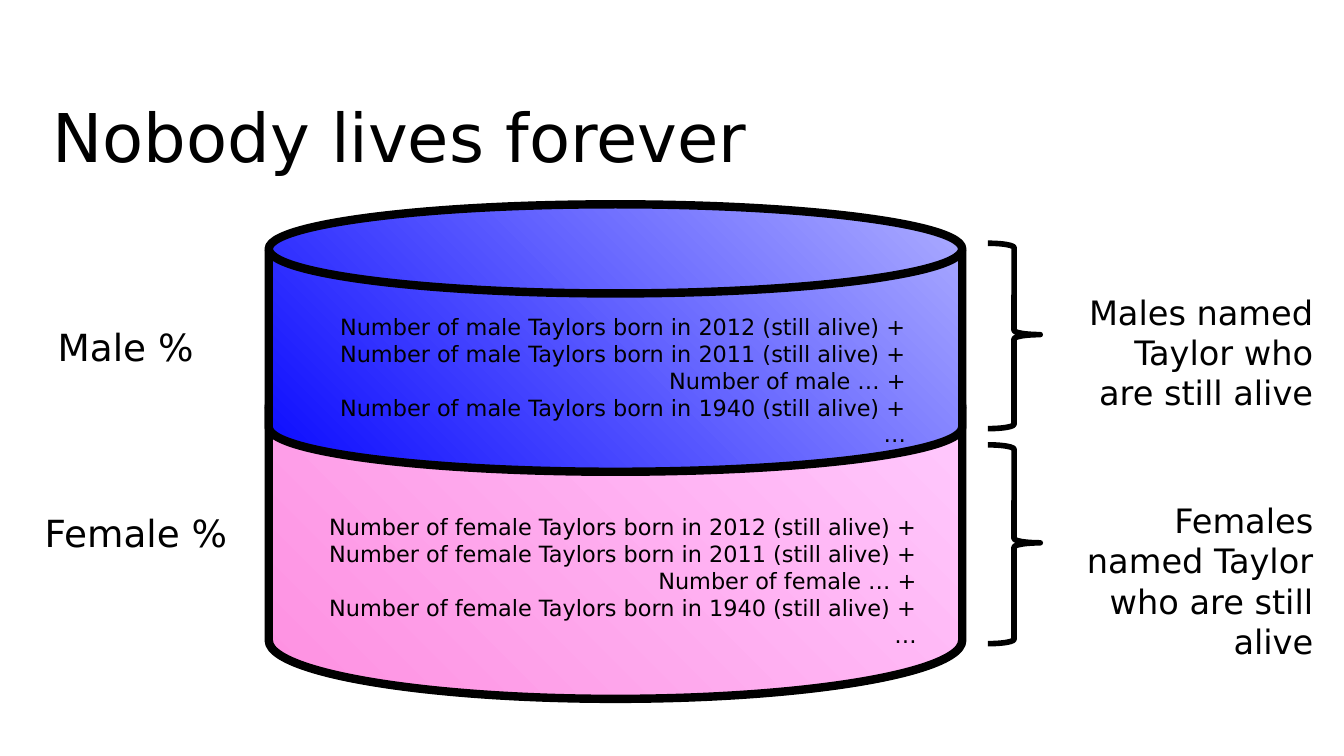
from copy import deepcopy

from pptx import Presentation
from pptx.dml.color import RGBColor
from pptx.enum.shapes import MSO_SHAPE
from pptx.enum.text import MSO_ANCHOR, MSO_AUTO_SIZE, PP_ALIGN
from pptx.oxml.ns import qn
from pptx.util import Inches, Pt

DISK = MSO_SHAPE.FLOWCHART_MAGNETIC_DISK
BRACE = MSO_SHAPE.RIGHT_BRACE
TOP = MSO_ANCHOR.TOP
GROW = MSO_AUTO_SIZE.SHAPE_TO_FIT_TEXT
LEFT, RIGHT = PP_ALIGN.LEFT, PP_ALIGN.RIGHT
FONT = "DejaVu Sans"
BLACK = RGBColor(0x00, 0x00, 0x00)
PINK = RGBColor(0xFE, 0x90, 0xE1)
PALE_PINK = RGBColor(0xFF, 0xCC, 0xFF)
BLUE = RGBColor(0x0A, 0x0A, 0xFF)
PALE_BLUE = RGBColor(0xAD, 0xAD, 0xFF)

# Widescreen 16:9 deck
deck = Presentation()
deck.slide_width = Inches(10)
deck.slide_height = deck.slide_width * 9 // 16
slide = deck.slides.add_slide(deck.slide_layouts[5])


def write_text(box, paragraphs, size, align=RIGHT, wrap=True):
    frame = box.text_frame
    frame.word_wrap = wrap
    frame.vertical_anchor = TOP
    for index, text in enumerate(paragraphs):
        para = frame.add_paragraph() if index else frame.paragraphs[0]
        para.alignment = align
        para.text = text.replace("\n", "\v")
        for span in para.runs:
            span.font.size = Pt(size)
            span.font.name = FONT
            span.font.color.rgb = BLACK
        # Line breaks take the format of the text around them
        for line_break in para._p.findall(qn("a:br")):
            line_break.append(deepcopy(span._r.rPr))


def add_outlined(kind, left, top, width, height, weight):
    shape = slide.shapes.add_shape(
        kind, Inches(left), Inches(top), Inches(width), Inches(height))
    shape.shadow.inherit = False
    shape.line.color.rgb = BLACK
    shape.line.width = Pt(weight)
    return shape


# Title
title = slide.shapes.title
title.left, title.top = Inches(0.29), Inches(0.66)
title.width, title.height = Inches(8.83), Inches(0.85)
write_text(title, ["Nobody lives forever"], 36, align=LEFT)

# Stacked disks, the lower one first
for top, height, dark, pale in [(2.59, 2.61, PINK, PALE_PINK),
                                (1.52, 1.99, BLUE, PALE_BLUE)]:
    disk = add_outlined(DISK, 2, top, 5.16, height, 4.5)
    disk.fill.gradient()
    disk.fill.gradient_angle = 45
    for stop, color in zip(disk.fill.gradient_stops, (dark, pale)):
        stop.color.rgb = color

# Braces
for top, height in [(1.81, 1.38), (3.31, 1.48)]:
    brace = add_outlined(BRACE, 7.35, top, 0.39, height, 3)
    brace.fill.background()
    brace.adjustments[0] = 0.083
    brace.adjustments[1] = 0.493

# Sums inside the disks
sums = {
    sex: [f"Number of {sex} Taylors born in 2012 (still alive) +\n"
          f"Number of {sex} Taylors born in 2011 (still alive) +",
          f"Number of {sex} … +\n"
          f"Number of {sex} Taylors born in 1940 (still alive) +",
          "…"]
    for sex in ("male", "female")
}

# Text boxes: left, top, width, height, paragraphs, size, wrap
texts = [
    (7.95, 2.12, 1.92, 1.01, ["Males named Taylor who are still alive"], 18, True),
    (7.95, 3.67, 1.92, 1.31, ["Females named Taylor who are still alive"], 18, True),
    (2.33, 2.28, 4.51, 1.11, sums["male"], 12, False),
    (0.29, 2.36, 1.25, 0.44, ["Male %"], 20, False),
    (0.18, 3.75, 1.61, 0.44, ["Female %"], 20, False),
    (2.25, 3.77, 4.67, 1.11, sums["female"], 12, False),
]
for left, top, width, height, paragraphs, size, wrap in texts:
    box = slide.shapes.add_textbox(
        Inches(left), Inches(top), Inches(width), Inches(height))
    write_text(box, paragraphs, size, wrap=wrap)
    box.text_frame.auto_size = GROW

deck.save("out.pptx")
